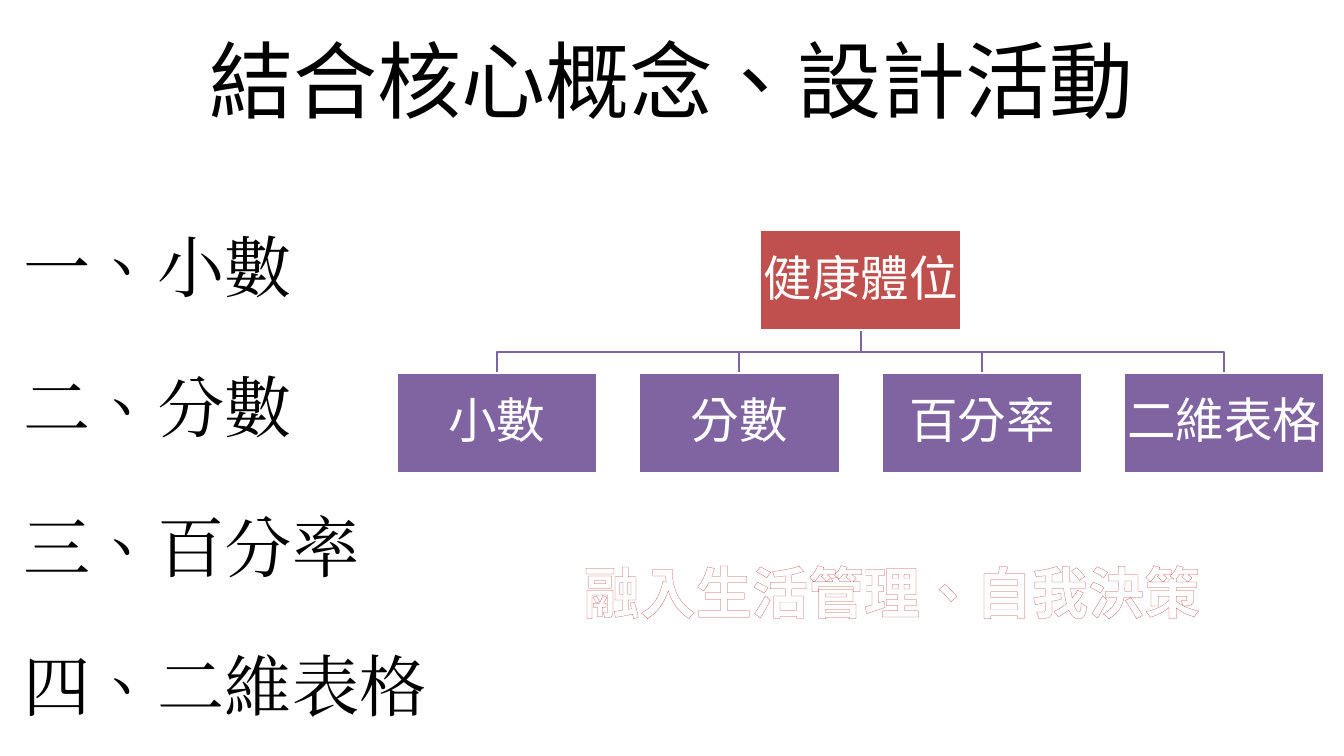
from lxml import etree
from pptx import Presentation
from pptx.dml.color import RGBColor
from pptx.enum.shapes import MSO_SHAPE
from pptx.enum.text import MSO_ANCHOR, MSO_AUTO_SIZE, PP_ALIGN
from pptx.oxml.ns import qn
from pptx.util import Pt

PX = 9525  # EMU per px, 96 px to the inch
COLORS = {"text": "000000", "light": "FFFFFF", "root": "C0504D", "leaf": "8064A2"}
SANS, SERIF = "Noto Sans CJK SC", "Times New Roman"

TITLE = "結合核心概念、設計活動"
TOPICS = ["一、小數", "二、分數", "三、百分率", "四、二維表格"]
ROOT = "健康體位"
LEAVES = ["小數", "分數", "百分率", "二維表格"]
SLOGAN = "融入生活管理、自我決策"


def rgb(name):
    return RGBColor.from_string(COLORS[name])


def emu(*lengths):
    return [round(v * PX) for v in lengths]


def write(p, text, size, color="text", font=SANS, bold=None, **layout):
    """Put one run into a paragraph, with its font and paragraph format."""
    for key, value in layout.items():
        setattr(p, key, value)
    r = p.add_run()
    r.text = text
    for key, value in {"size": Pt(size), "name": font, "bold": bold}.items():
        setattr(r.font, key, value)
    r.font.color.rgb = rgb(color)
    rpr = r._r.get_or_add_rPr()
    rpr.set("lang", "zh-TW")
    latin = rpr.find(qn("a:latin"))
    ea = etree.Element(qn("a:ea"), typeface=font)
    latin.addnext(ea)
    return rpr


def add_box(s, box, anchor=MSO_ANCHOR.TOP):
    tf = s.shapes.add_textbox(*emu(*box)).text_frame
    tf.word_wrap = True
    tf.vertical_anchor = anchor
    return tf


def add_title(s, box):
    tf = add_box(s, box, MSO_ANCHOR.MIDDLE)
    write(tf.paragraphs[0], TITLE, 90, alignment=PP_ALIGN.CENTER)


def add_topics(s, box):
    tf = add_box(s, box)
    tf.margin_top = emu(20)[0]
    for i, topic in enumerate(TOPICS):
        p = tf.add_paragraph() if i else tf.paragraphs[0]
        write(p, topic, 72, font=SERIF, line_spacing=1.5,
              space_before=Pt(20 if i else 0))


def add_node(s, box, text, fill):
    sp = s.shapes.add_shape(MSO_SHAPE.RECTANGLE, *emu(*box))
    sp.shadow.inherit = False
    sp.fill.solid()
    sp.fill.fore_color.rgb = rgb(fill)
    sp.line.color.rgb = rgb("light")
    sp.line.width = Pt(2)
    tf = sp.text_frame
    tf.word_wrap = True
    tf.vertical_anchor = MSO_ANCHOR.MIDDLE
    for side in ("left", "top", "right", "bottom"):
        setattr(tf, f"margin_{side}", emu(3)[0])
    write(tf.paragraphs[0], text, 52, "light", alignment=PP_ALIGN.CENTER,
          line_spacing=0.9, space_after=Pt(18))


def add_branch(s, start, end):
    """Draw an elbow line that turns halfway down."""
    (x1, y1), (x2, y2) = start, end
    mid = (y1 + y2) / 2
    fb = s.shapes.build_freeform(*emu(x1, y1), scale=1.0)
    fb.add_line_segments([emu(x1, mid), emu(x2, mid), emu(x2, y2)], close=False)
    sp = fb.convert_to_shape()
    sp.shadow.inherit = False
    sp.fill.background()
    sp.line.color.rgb = rgb("leaf")
    sp.line.width = Pt(2)


def add_tree(s, box, node_w=286, node_h=143):
    x, y, w, h = box
    root_x = x + (w - node_w) / 2
    leaf_y = y + h - node_h
    step = (w - node_w) / (len(LEAVES) - 1)
    leaf_xs = [x + i * step for i in range(len(LEAVES))]
    # Branches lie behind the nodes
    for leaf_x in reversed(leaf_xs):
        add_branch(s, (root_x + node_w / 2, y + node_h), (leaf_x + node_w / 2, leaf_y))
    add_node(s, (root_x, y, node_w, node_h), ROOT, "root")
    for leaf_x, text in zip(leaf_xs, LEAVES):
        add_node(s, (leaf_x, leaf_y, node_w, node_h), text, "leaf")


def add_slogan(s, box):
    tf = add_box(s, box)
    tf.auto_size = MSO_AUTO_SIZE.SHAPE_TO_FIT_TEXT
    rpr = write(tf.paragraphs[0], SLOGAN, 60, "light", bold=True,
                alignment=PP_ALIGN.CENTER)
    # Thin outline around the letters
    ln = etree.Element(qn("a:ln"), w=str(Pt(0.52)))
    fill = etree.SubElement(ln, qn("a:solidFill"))
    etree.SubElement(fill, qn("a:srgbClr"), val=COLORS["root"])
    rpr.insert(0, ln)


def main():
    prs = Presentation()
    prs.slide_width, prs.slide_height = emu(1920, 1080)
    s = prs.slides.add_slide(prs.slide_layouts[6])
    add_title(s, (96, 24, 1728, 178))
    add_topics(s, (24, 245, 664, 772))
    add_tree(s, (567, 329, 1325, 347))
    add_slogan(s, (800, 792, 948, 107))
    prs.save("out.pptx")


if __name__ == "__main__":
    main()
